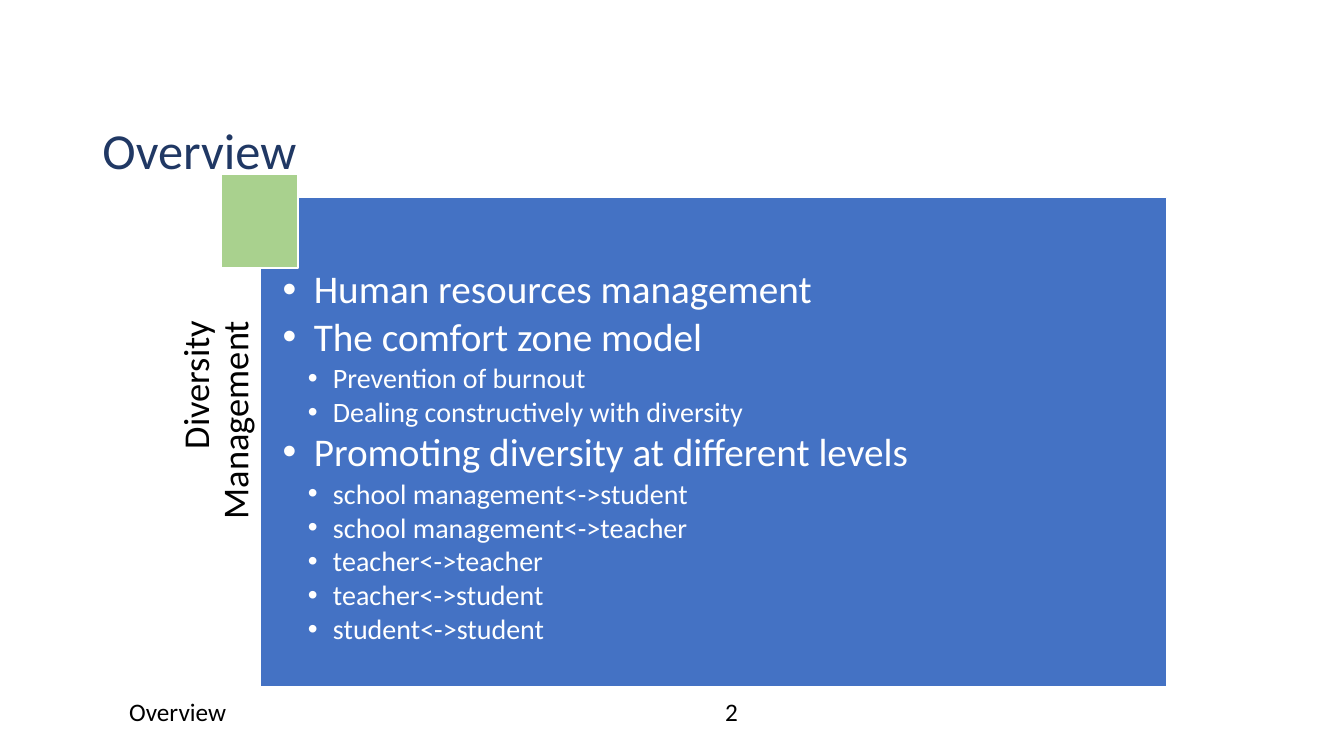
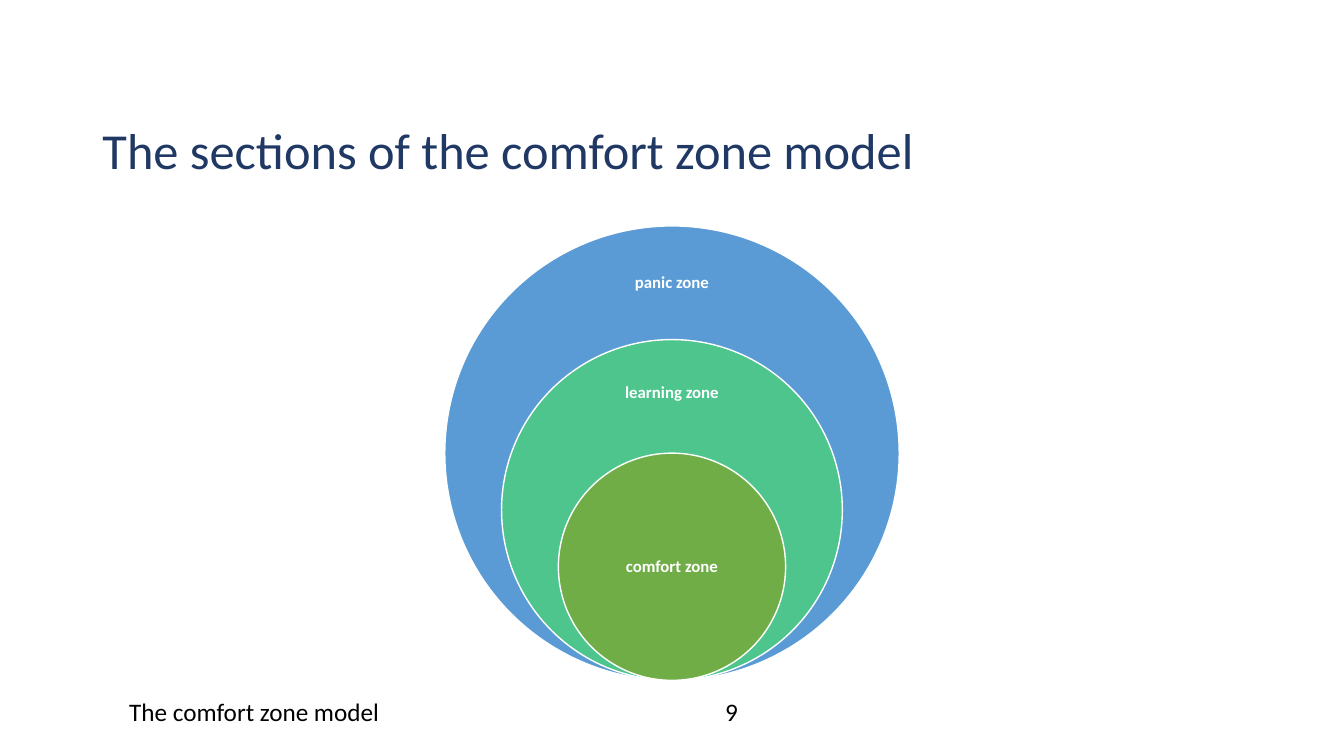
from lxml.etree import SubElement
from pptx import Presentation
from pptx.dml.color import RGBColor
from pptx.enum.shapes import MSO_SHAPE as SHAPE
from pptx.enum.text import MSO_ANCHOR as ANCHOR, MSO_AUTO_SIZE as AUTO, PP_ALIGN as ALIGN
from pptx.oxml.ns import qn
from pptx.util import Inches, Pt

C = {name: RGBColor.from_string(code) for name, code in {
    "navy": "203864", "black": "000000", "white": "FFFFFF", "panel": "4472C4",
    "square": "A9D18E", "panic": "5B9BD5", "learning": "4DC58D", "comfort": "70AD47",
}.items()}
FONT = "Calibri"
COLS, ROWS = 160, 90

prs = Presentation()
prs.slide_width, prs.slide_height = Inches(40 / 3), Inches(7.5)
col, row = prs.slide_width / COLS, prs.slide_height / ROWS


def place(sp, x, y, w, h, fill=None):
    sp.left, sp.top = round(x * col), round(y * row)
    sp.width, sp.height = round(w * col), round(h * row)
    if fill:
        sp.shadow.inherit = False
        sp.fill.solid()
        sp.fill.fore_color.rgb = C[fill]
        sp.line.color.rgb = C["white"]
        sp.line.width = Pt(1)
    return sp


def write(sp, text, size=18, color="black", bold=False, align=ALIGN.LEFT, anchor=ANCHOR.TOP,
          spacing=1.0, after=0, insets=(0.1, 0.05, 0.1, 0.05), level=None):
    tf = sp.text_frame
    tf.word_wrap, tf.auto_size, tf.vertical_anchor = True, AUTO.NONE, anchor
    tf.margin_left, tf.margin_top, tf.margin_right, tf.margin_bottom = map(Inches, insets)
    p = tf.add_paragraph() if tf.text else tf.paragraphs[0]
    p.alignment, p.line_spacing = align, spacing
    p.space_before, p.space_after = Pt(0), Pt(after)
    if level is not None:
        p.level = level
        indent, hang = [(0.31, 0.31), (0.5, 0.25)][level]
        pPr = p._p.get_or_add_pPr()
        pPr.set("marL", str(Inches(indent)))
        pPr.set("indent", str(-Inches(hang)))
        SubElement(pPr, qn("a:buFont"), typeface="Arial")
        SubElement(pPr, qn("a:buChar"), char="•")
    r = p.add_run()
    r.text = text
    r.font.name, r.font.size, r.font.bold = FONT, Pt(size), bold
    r.font.color.rgb = C[color]


TITLE_AND_LIST, TITLE_ONLY = prs.slide_layouts[1], prs.slide_layouts[5]
slides = []
for layout, title, footer, number in [
    (TITLE_AND_LIST, "Overview", "Overview", "2"),
    (TITLE_ONLY, "The sections of the comfort zone model", "The comfort zone model", "9"),
]:
    s = prs.slides.add_slide(layout)
    slides.append(s)
    write(place(s.shapes.title, 11, 14.4, 138, 11.6), title, size=36, color="navy", spacing=0.9)
    for text, x, w, align in [(footer, 14.2, 54, ALIGN.LEFT), (number, 69.1, 36, ALIGN.CENTER)]:
        sp = place(s.shapes.add_textbox(0, 0, 0, 0), x, 82.3, w, 4.8)
        write(sp, text, align=align)

overview, zones = slides

side = place(overview.shapes.add_textbox(0, 0, 0, 0), 2.9, 47.8, 46.3, 9.8)
side.rotation = 270
write(side, "Diversity Management", size=26, align=ALIGN.RIGHT, spacing=0.9, insets=(0, 0, 0.72, 0))

topics = place(overview.placeholders[1], 31, 23.5, 107.9, 58.3, fill="panel")
for level, text in [
    (0, "Human resources management"),
    (0, "The comfort zone model"),
    (1, "Prevention of burnout"),
    (1, "Dealing constructively with diversity"),
    (0, "Promoting diversity at different levels"),
    (1, "school management<->student"),
    (1, "school management<->teacher"),
    (1, "teacher<->teacher"),
    (1, "teacher<->student"),
    (1, "student<->student"),
]:
    size = (28, 20)[level]
    write(topics, text, size=size, color="white", spacing=0.9, after=round(size * 0.13, 1),
          insets=(0.22, 0.72, 0.22, 0.22), level=level)

place(overview.shapes.add_shape(SHAPE.RECTANGLE, 0, 0, 0, 0), 26.3, 20.8, 9.2, 11.1, fill="square")

CENTRE, FLOOR, DIAMETER = COLS / 2, 81, 54.1
LABEL_W, LABEL_H = 19, 8
for name, share, label_y in [("panic", 1, 33.7), ("learning", 0.75, 46.8), ("comfort", 0.5, 67.5)]:
    d = DIAMETER * share
    place(zones.shapes.add_shape(SHAPE.OVAL, 0, 0, 0, 0), CENTRE - d / 2, FLOOR - d, d, d, fill=name)
    label = place(zones.shapes.add_textbox(0, 0, 0, 0), CENTRE - LABEL_W / 2,
                  label_y - LABEL_H / 2, LABEL_W, LABEL_H)
    write(label, f"{name} zone", size=12, color="white", bold=True, align=ALIGN.CENTER,
          anchor=ANCHOR.MIDDLE, spacing=0.9, insets=(0.09,) * 4)

prs.save("out.pptx")
